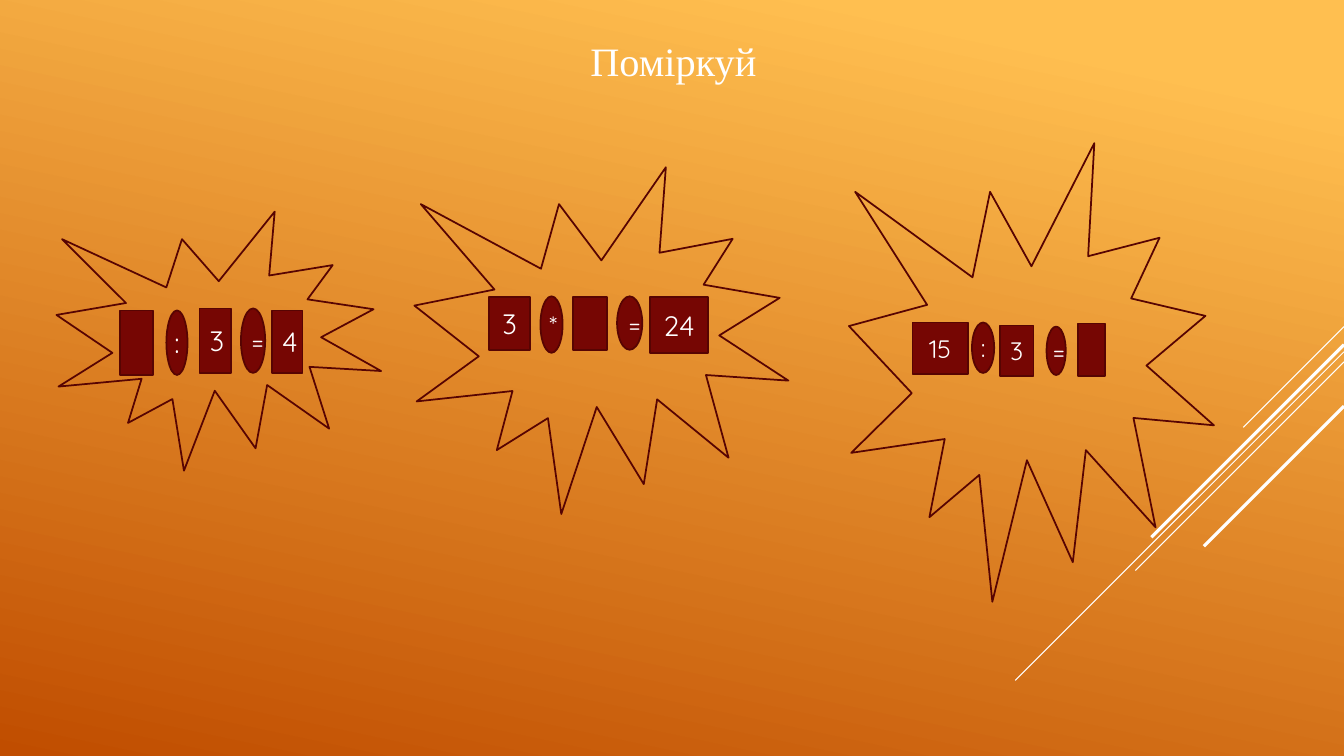
from lxml import etree
from pptx import Presentation
from pptx.dml.color import RGBColor
from pptx.enum.shapes import MSO_CONNECTOR, MSO_SHAPE
from pptx.enum.text import MSO_ANCHOR, MSO_AUTO_SIZE, PP_ALIGN
from pptx.oxml.ns import qn
from pptx.util import Inches, Pt

COLS, ROWS = 13.33, 7.5
WIDTH, HEIGHT = Inches(COLS), Inches(ROWS)
RECT, OVAL, SEAL = MSO_SHAPE.RECTANGLE, MSO_SHAPE.OVAL, MSO_SHAPE.EXPLOSION1
STRAIGHT = MSO_CONNECTOR.STRAIGHT
CENTER = PP_ALIGN.CENTER
TOP, MIDDLE = MSO_ANCHOR.TOP, MSO_ANCHOR.MIDDLE
NO_AUTOFIT = MSO_AUTO_SIZE.NONE

COLORS = {
    "light": "FFBF50",
    "dark": "C04D00",
    "card": "760603",
    "outline": "570402",
    "white": "FFFFFF",
}

RAYS = [(3.24, 1, 0.75), (3.49, 3.26, 0.75), (3.59, 2.07, 0.75),
        (3.42, 1.91, 2.25), (4.03, 1.39, 2.25)]

EQUATIONS = [
    [(RECT, "", 20, 1.19, 3.08, 0.33, 0.64),
     (OVAL, ":", 20, 1.65, 3.08, 0.21, 0.64),
     (RECT, "3", 20, 1.98, 3.06, 0.31, 0.64),
     (OVAL, "=", 18, 2.39, 3.06, 0.24, 0.64),
     (RECT, "4", 20, 2.7, 3.08, 0.3, 0.62)],
    [(RECT, "3", 20, 4.85, 2.95, 0.41, 0.52),
     (OVAL, "*", 18, 5.36, 2.94, 0.22, 0.56),
     (RECT, "", 20, 5.68, 2.95, 0.34, 0.52),
     (OVAL, "=", 18, 6.12, 2.94, 0.25, 0.53),
     (RECT, "24", 20, 6.45, 2.95, 0.57, 0.55)],
    [(RECT, "15", 18, 9.05, 3.2, 0.55, 0.51),
     (OVAL, ":", 18, 9.64, 3.2, 0.22, 0.5),
     (RECT, "3", 18, 9.92, 3.23, 0.33, 0.5),
     (OVAL, "=", 18, 10.38, 3.24, 0.19, 0.48),
     (RECT, "", 18, 10.69, 3.21, 0.27, 0.52)],
]

BURSTS = [(0.56, 2.1, 3.22, 2.57), (4.11, 1.66, 3.71, 3.44),
          (8.42, 1.42, 3.62, 4.55)]


def color(name):
    return RGBColor.from_string(COLORS[name])


def col(n):
    return round(WIDTH * n / COLS)


def row(n):
    return round(HEIGHT * n / ROWS)


def box(x, y, w, h):
    return col(x), row(y), col(w), row(h)


def write(sp, text, size=18, font="Quicksand", anchor=MIDDLE):
    tf = sp.text_frame
    tf.word_wrap = True
    tf.vertical_anchor = anchor
    p = tf.paragraphs[0]
    p.alignment = CENTER
    r = p.add_run()
    r.text = text
    r.font.size = Pt(size)
    r.font.name = font
    r.font.color.rgb = color("white")


def paint_background(s):
    fill = s.background.fill
    fill.gradient()
    fill.gradient_angle = 360 - 102
    stops = zip(fill.gradient_stops, ((0.1, "light"), (1, "dark")))
    for stop, (position, name) in stops:
        stop.position = position
        stop.color.rgb = color(name)


def add_ray(s, top, length, weight):
    line = s.shapes.add_connector(
        STRAIGHT, col(COLS), row(top), col(COLS - length), row(top + length))
    line.line.color.rgb = color("white")
    line.line.width = Pt(weight)
    sp_pr = line._element.find(qn("p:spPr"))
    etree.SubElement(sp_pr, qn("a:effectLst"))


def add_title(s, text):
    sp = s.shapes.title
    sp.left, sp.top, sp.width, sp.height = box(0.75, 0.36, 11.86, 0.85)
    write(sp, text, size=28.8, font="Times New Roman", anchor=TOP)
    sp.text_frame.auto_size = NO_AUTOFIT
    sp.text_frame.margin_top = 0


def add_outlined(s, kind, place):
    sp = s.shapes.add_shape(kind, *box(*place))
    sp.shadow.inherit = False
    sp.fill.background()
    sp.line.color.rgb = color("outline")
    sp.line.width = Pt(1.25)
    return sp


def add_card(s, kind, text, size, *place):
    sp = add_outlined(s, kind, place)
    sp.fill.solid()
    sp.fill.fore_color.rgb = color("card")
    if text:
        write(sp, text, size=size)


def main():
    prs = Presentation()
    prs.slide_width, prs.slide_height = WIDTH, HEIGHT
    s = prs.slides.add_slide(prs.slide_layouts[5])
    paint_background(s)
    for ray in RAYS:
        add_ray(s, *ray)
    add_title(s, "Поміркуй")
    for equation in EQUATIONS:
        for card in equation:
            add_card(s, *card)
    for place in BURSTS:
        add_outlined(s, SEAL, place)
    prs.save("out.pptx")


if __name__ == "__main__":
    main()
